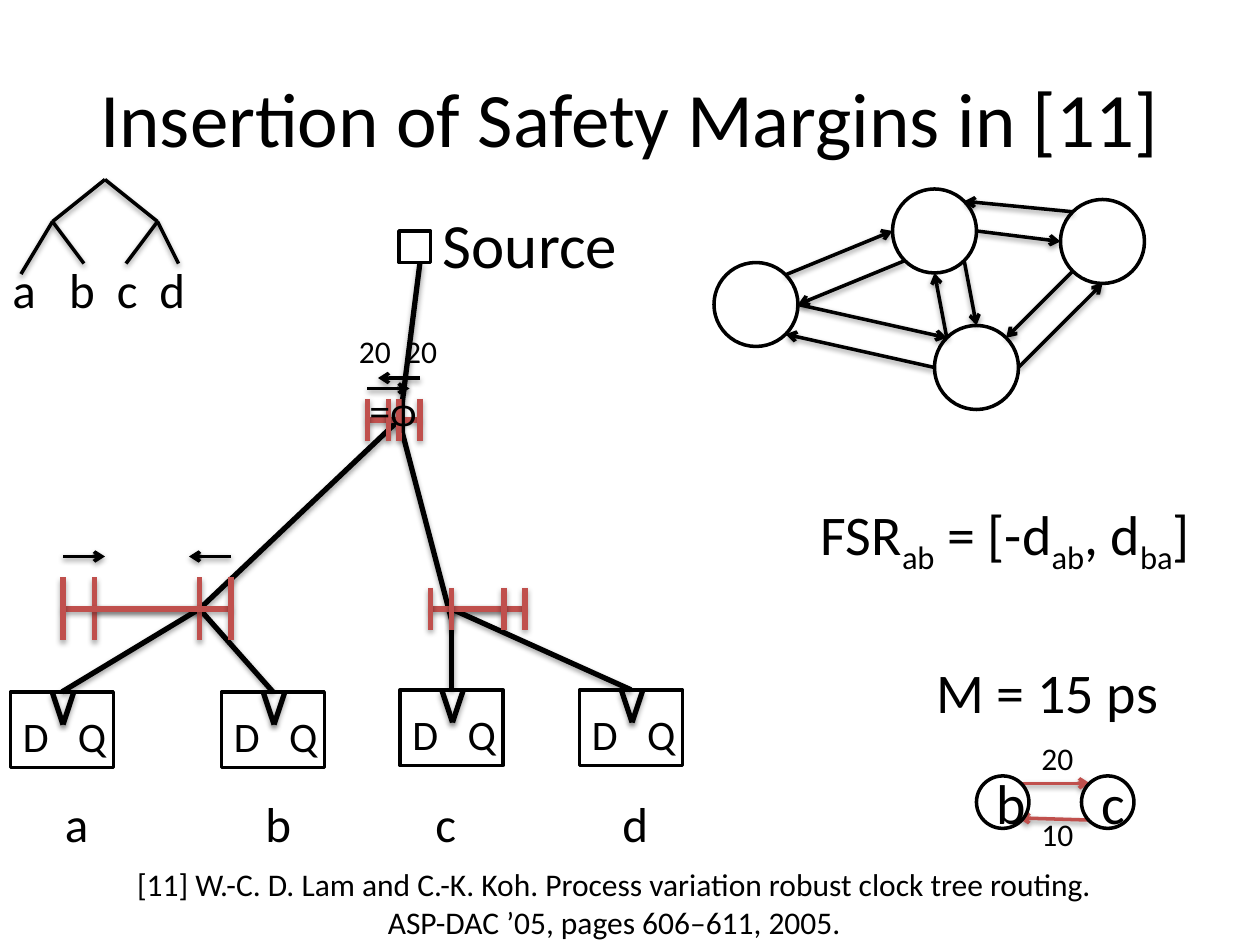
"""Build the slide on safety margins in a clock tree, on a 120 by 90 grid."""
from math import cos, pi, sin

from lxml.etree import SubElement
from pptx import Presentation
from pptx.dml.color import RGBColor
from pptx.enum.shapes import MSO_CONNECTOR, MSO_SHAPE
from pptx.enum.text import MSO_ANCHOR, PP_ALIGN
from pptx.oxml.ns import qn
from pptx.util import Inches, Pt

COLORS = {"ink": "000000", "paper": "FFFFFF", "range": "C0504D"}
RECT, OVAL = MSO_SHAPE.RECTANGLE, MSO_SHAPE.OVAL

prs = Presentation()
prs.slide_width, prs.slide_height = Inches(10), Inches(7.5)
U = prs.slide_width / 120
s = prs.slides.add_slide(prs.slide_layouts[6])


def box(x, y, w, h, text="", size=18, kind=None, center=False, wrap=True, tabs=()):
    at = [round(v * U) for v in (x, y, w, h)]
    if kind is None:
        sp = s.shapes.add_textbox(*at)
        sp.text_frame.word_wrap = wrap
    else:
        sp = s.shapes.add_shape(kind, *at)
        sp.shadow.inherit = False
        sp.fill.solid()
        sp.fill.fore_color.rgb = RGBColor.from_string(COLORS["paper"])
        sp.line.color.rgb = RGBColor.from_string(COLORS["ink"])
        sp.line.width = Pt(2)
    sp.text_frame.text = text
    for p in sp.text_frame.paragraphs:
        p.alignment = PP_ALIGN.CENTER if center else PP_ALIGN.LEFT
        p.font.size, p.font.name = Pt(size), "Calibri"
        if tabs:
            stops = SubElement(p._p.get_or_add_pPr(), qn("a:tabLst"))
            p._p.pPr.insert(0, stops)
            for pos in tabs:
                SubElement(stops, qn("a:tab"), pos=str(round(pos * U)), algn="l")
        for r in p.runs:
            r.font.size, r.font.name = Pt(size), "Calibri"
            r.font.color.rgb = RGBColor.from_string(COLORS["ink"])
    return sp


def line(x1, y1, x2, y2, color="ink", width=3, arrow=False):
    cx = s.shapes.add_connector(
        MSO_CONNECTOR.STRAIGHT, *[round(v * U) for v in (x1, y1, x2, y2)])
    cx.line.color.rgb = RGBColor.from_string(COLORS[color])
    cx.line.width = Pt(width)
    if arrow:
        SubElement(cx.line._get_or_add_ln(), qn("a:tailEnd"), type="arrow")
    return cx


title = box(6, 3.6, 108, 15, "Insertion of Safety Margins in [11]", 44, center=True)
title.text_frame.vertical_anchor = MSO_ANCHOR.MIDDLE

flops = []
for x, y in ((1, 65.9), (21.1, 65.9), (38.1, 65.7), (55.2, 65.7)):
    flops.append(box(x, y, 9.8, 7.2, kind=RECT))
    for dx in (4, 6):
        line(x + dx, y + 0.1, x + 5, y + 3.1)
    box(x, y + 1.2, 11, 10.9, "D\tQ", 24, tabs=(5.25,))
box(5, 75, 61, 6.9, "a\tb\tc\td", 28, tabs=(19.1, 35.3, 53.1))

box(41, 19, 19.2, 8.5, "Source", 36, wrap=False)
for flop, x in zip(flops, (19, 19, 43, 43)):
    line(x, 58, x, 66).end_connect(flop, 0)
for ends in ((38, 40, 43, 59), (38, 40, 19, 58), (40, 25, 38, 40.8)):
    line(*ends)
box(38, 22, 3, 3, kind=RECT)

for x1, x2, y, half in ((9, 19, 58, 3), (41, 50, 58, 2), (35, 40, 40, 2),
                        (43, 48, 58, 2), (6, 22, 58, 3), (37, 38, 40, 2)):
    line(x1, y, x2, y, "range")
    for x in (x1, x2):
        line(x, y - half, x, y + half, "range")
for x1, x2, y in ((22, 18, 53), (6, 10, 53), (35, 39, 37), (40, 36, 36)):
    line(x1, y, x2, y, width=2, arrow=True)

box(0, 24.1, 22, 6.9, "a\tb\tc\td", 28, tabs=(5.4, 9.95, 14))
for ends in ((2, 26.1, 5, 21.1), (8, 25.1, 5, 21.1), (12, 25.1, 15, 21.1),
             (17, 25.1, 15, 21.1), (15, 21.1, 10, 17.1), (5, 21.1, 10, 17.1)):
    line(*ends, width=2)

p = box(77, 47, 39.5, 7.7, wrap=False).text_frame.paragraphs[0]
for i, part in enumerate(("FSR", "ab", " = [-d", "ab", ", d", "ba", "]")):
    r = p.add_run()
    r.text = part
    r.font.size, r.font.name = Pt(32), "Calibri"
    r.font.color.rgb = RGBColor.from_string(COLORS["ink"])
    if i % 2:
        r.font._element.set("baseline", "-25000")

box(0, 81.8, 117, 8.2,
    "[11] W.-C. D. Lam and C.-K. Koh. Process variation robust clock tree routing.\n"
    "ASP-DAC ’05, pages 606–611, 2005.", center=True)

box(88, 62, 23.8, 7.7, "M = 15 ps", 32, wrap=False)
line(97.3, 74.6, 103.8, 74.6, "range", 2, True)
line(103.7, 78.1, 97, 77.9, "range", 2, True)
for x, name in ((93, "b"), (103, "c")):
    box(x, 73.9, 5, 5, name, 32, OVAL, center=True)
delays = box(98, 69.8, 5.5, 12.1, "20\n10", wrap=False)
delays.text_frame.paragraphs[1].space_before = Pt(22)

box(34, 36, 7, 6, "=ф", 24, wrap=False)
box(33, 31, 10, 4.8, "20\t20", wrap=False, tabs=(4.4,))

R = 4
nodes = {"west": (72, 29), "north": (89, 22), "south": (93, 35), "east": (105, 23)}
for x, y in nodes.values():
    box(x - R, y - R, 2 * R, 2 * R, kind=OVAL)
for start, turn1, end, turn2 in (
        ("west", 0, "south", 5), ("north", 1, "south", 6), ("south", 4, "west", 1),
        ("north", 0, "east", 4), ("west", 7, "north", 4), ("east", 3, "south", 7),
        ("east", 5, "north", 7), ("north", 3, "west", 0), ("south", 5, "north", 2),
        ("south", 0, "east", 2)):
    ends = []
    for node, turn in ((start, turn1), (end, turn2)):
        x, y = nodes[node]
        ends += [x + R * cos(turn * pi / 4), y + R * sin(turn * pi / 4)]
    line(*ends, width=2, arrow=True)

prs.save("out.pptx")
